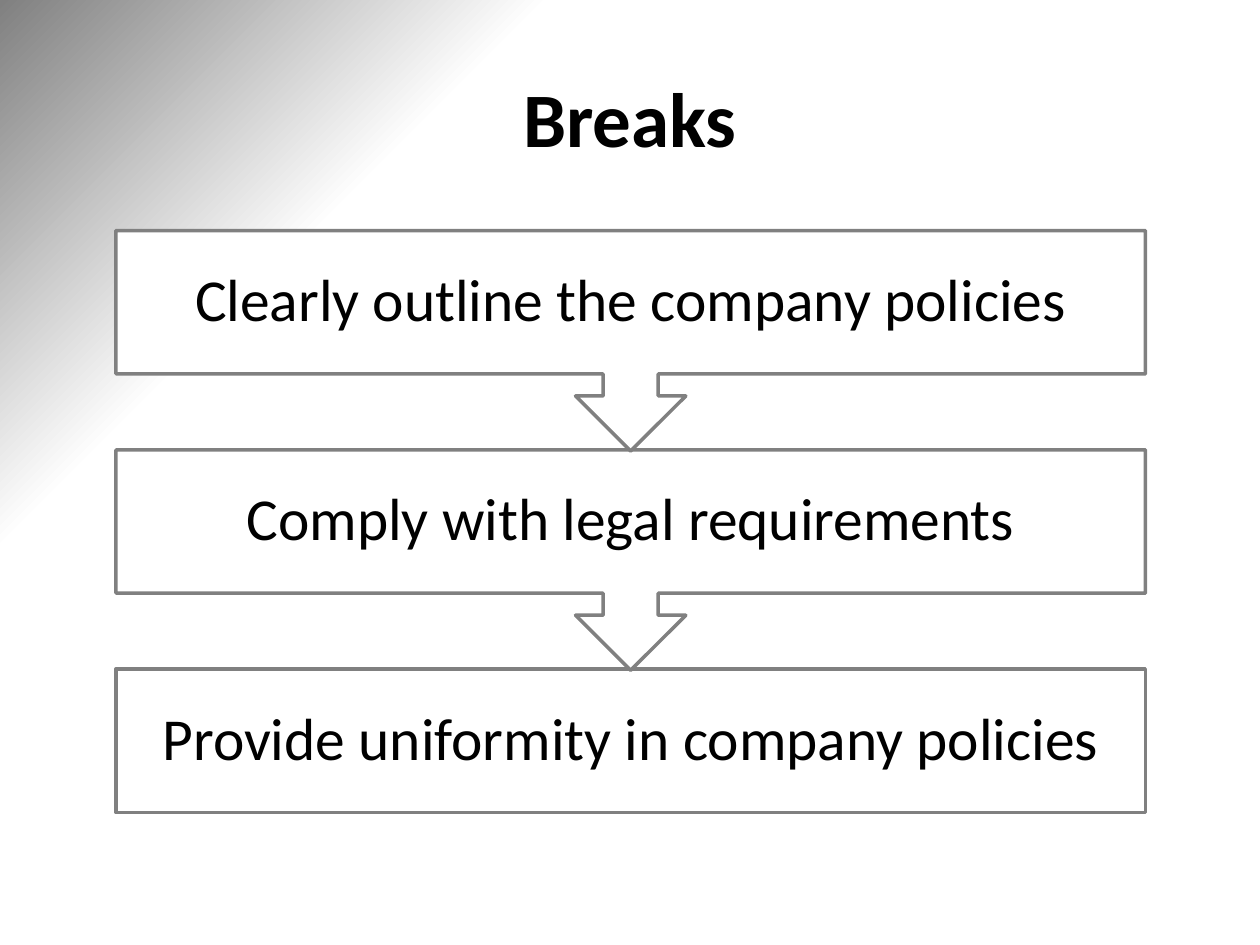
import pptx
import pptx.dml.color
import pptx.enum.shapes
import pptx.enum.text
import pptx.oxml
import pptx.oxml.ns
import pptx.util

Inches = pptx.util.Inches
Pt = pptx.util.Pt
SHAPE = pptx.enum.shapes.MSO_SHAPE

COLORS = {"white": "FFFFFF", "gray": "808080", "text": "000000"}
FONT = "Calibri"
STEPS = [
    "Clearly outline the company policies",
    "Comply with legal requirements",
    "Provide uniformity in company policies",
]
LEFT, TOP, WIDTH = 0.92, 1.83, 8.17
BOX_H, CALLOUT_H, PITCH = 1.14, 1.75, 1.74


def rgb(name):
    return pptx.dml.color.RGBColor.from_string(COLORS[name])


def set_background(s):
    """Radial gradient centred on the bottom right corner."""
    fill = s.background.fill
    fill.gradient()
    for stop, (name, pos) in zip(fill.gradient_stops, [("white", 0.75), ("gray", 1)]):
        stop.color.rgb = rgb(name)
        stop.position = pos
    grad = s.element.find(".//" + pptx.oxml.ns.qn("a:gradFill"))
    lin = grad.find(pptx.oxml.ns.qn("a:lin"))
    radial = pptx.oxml.parse_xml(
        f'<a:path {pptx.oxml.ns.nsdecls("a")} path="circle">'
        '<a:fillToRect l="100000" t="100000"/></a:path>')
    grad.replace(lin, radial)


def write_text(sp, text, size, bold=False):
    tf = sp.text_frame
    tf.word_wrap = True
    tf.auto_size = pptx.enum.text.MSO_AUTO_SIZE.NONE
    tf.vertical_anchor = pptx.enum.text.MSO_ANCHOR.MIDDLE
    p = tf.paragraphs[0]
    p.alignment = pptx.enum.text.PP_ALIGN.CENTER
    r = p.add_run()
    r.text = text
    r.font.name = FONT
    r.font.size = Pt(size)
    r.font.bold = bold
    r.font.color.rgb = rgb("text")
    return tf


def add_title(s, text):
    sp = s.shapes.title
    sp.left, sp.top, sp.width, sp.height = map(Inches, (0.5, 0.3, 9, 1.25))
    write_text(sp, text, 44, bold=True)


def add_outline(shapes, kind, top, height, rotation=0):
    sp = shapes.add_shape(kind, Inches(LEFT), Inches(top), Inches(WIDTH), Inches(height))
    sp.rotation = rotation
    sp.shadow.inherit = False
    sp.fill.solid()
    sp.fill.fore_color.rgb = rgb("white")
    sp.line.color.rgb = rgb("gray")
    sp.line.width = Pt(2)


def add_label(shapes, text, top):
    sp = shapes.add_textbox(Inches(LEFT), Inches(top), Inches(WIDTH), Inches(BOX_H))
    tf = write_text(sp, text, 34)
    tf.margin_left = tf.margin_right = tf.margin_top = tf.margin_bottom = Inches(0.26)
    tf.paragraphs[0].line_spacing = 0.9


def add_process(s, steps):
    shapes = s.shapes.add_group_shape().shapes
    last = len(steps) - 1
    # Bottom step first, so that each arrow tip lies over the next box
    for i in range(last, -1, -1):
        top = TOP + i * PITCH
        if i == last:
            add_outline(shapes, SHAPE.RECTANGLE, top, BOX_H)
        else:
            add_outline(shapes, SHAPE.UP_ARROW_CALLOUT, top, CALLOUT_H, rotation=180)
        add_label(shapes, steps[i], top)


def main():
    prs = pptx.Presentation()
    prs.slide_width, prs.slide_height = Inches(10), Inches(7.5)
    s = prs.slides.add_slide(prs.slide_layouts[5])
    set_background(s)
    add_title(s, "Breaks")
    add_process(s, STEPS)
    prs.save("out.pptx")


if __name__ == "__main__":
    main()
